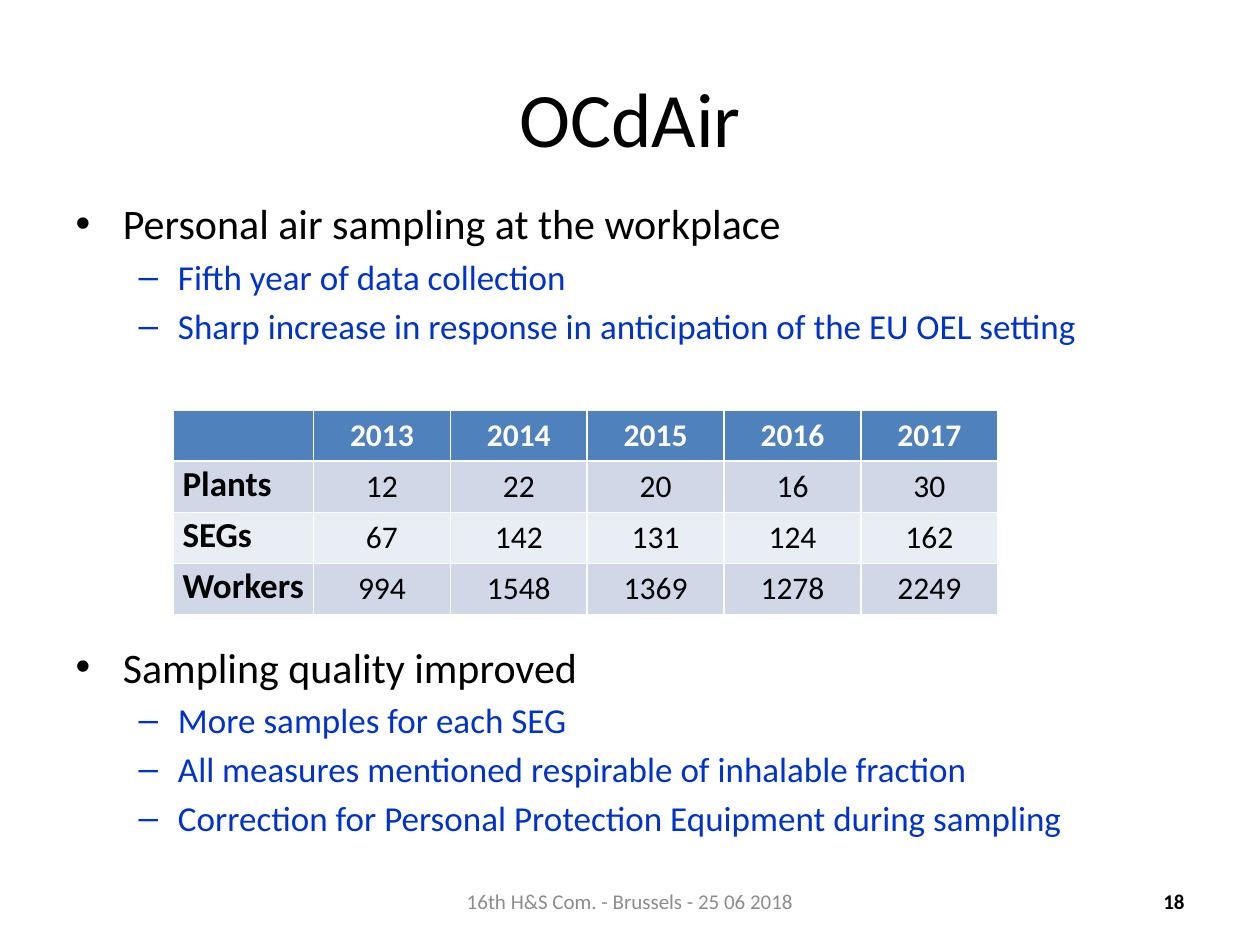
"""Build the OCdAir slide: two bullet lists around a table of yearly air sampling counts."""
from lxml.etree import SubElement
from pptx import Presentation
from pptx.dml.color import RGBColor
from pptx.enum.text import MSO_ANCHOR, MSO_AUTO_SIZE, PP_ALIGN
from pptx.oxml.ns import qn
from pptx.util import Cm, Pt

BLACK = RGBColor(0x00, 0x00, 0x00)
WHITE = RGBColor(0xFF, 0xFF, 0xFF)
GREY = RGBColor(0x8C, 0x8C, 0x8C)
BLUE = RGBColor(0x00, 0x33, 0xCC)
HEADER_BLUE = RGBColor(0x4F, 0x81, 0xBD)
BAND_DARK = RGBColor(0xD0, 0xD8, 0xE8)
BAND_LIGHT = RGBColor(0xE9, 0xED, 0xF4)


def write(paragraph, text, size, color, bold=False):
    run = paragraph.add_run()
    run.text = text
    font_format = {"name": "Calibri", "size": Pt(size), "bold": bold}
    for name, value in font_format.items():
        setattr(run.font, name, value)
    run.font.color.rgb = color


def place(shape, left, top, width, height):
    box = {"left": left, "top": top, "width": width, "height": height}
    for name, value in box.items():
        setattr(shape, name, Cm(value))


deck = Presentation()
deck.slide_width, deck.slide_height = Cm(25.4), Cm(19.05)
slide = deck.slides.add_slide(deck.slide_layouts.get_by_name("Two Content"))
heading, sampling, quality = slide.placeholders

place(heading, 1.27, 0.76, 22.86, 3.18)
heading.text_frame.vertical_anchor = MSO_ANCHOR.MIDDLE
write(heading.text_frame.paragraphs[0], "OCdAir", 44, BLACK)

place(sampling, 1.27, 3.86, 23.62, 3.68)
place(quality, 1.27, 12.8, 24.13, 4.72)
topics = [
    (sampling, [
        "Personal air sampling at the workplace",
        "Fifth year of data collection",
        "Sharp increase in response in anticipation of the EU OEL setting",
    ]),
    (quality, [
        "Sampling quality improved",
        "More samples for each SEG",
        "All measures mentioned respirable of inhalable fraction",
        "Correction for Personal Protection Equipment during sampling",
    ]),
]
for topic, (statement, *details) in topics:
    frame = topic.text_frame
    frame.auto_size = MSO_AUTO_SIZE.NONE
    write(frame.paragraphs[0], statement, 24, BLACK)
    for detail in details:
        point = frame.add_paragraph()
        point.level = 1
        write(point, detail, 20, BLUE)

counts = [
    ["", "2013", "2014", "2015", "2016", "2017"],
    ["Plants", "12", "22", "20", "16", "30"],
    ["SEGs", "67", "142", "131", "124", "162"],
    ["Workers", "994", "1548", "1369", "1278", "2249"],
]
row_fills = [HEADER_BLUE, BAND_DARK, BAND_LIGHT, BAND_DARK]
label_width, year_width, row_height = 2.82, 2.76, 1.03
table = slide.shapes.add_table(
    len(counts), len(counts[0]), Cm(3.5), Cm(8.27),
    Cm(label_width + 5 * year_width), Cm(4 * row_height),
).table
for index, column in enumerate(table.columns):
    column.width = Cm(year_width if index else label_width)
for row in table.rows:
    row.height = Cm(row_height)

for row_index, (values, fill) in enumerate(zip(counts, row_fills)):
    for column_index, value in enumerate(values):
        is_label = column_index == 0
        cell = table.cell(row_index, column_index)
        cell_format = {
            "vertical_anchor": MSO_ANCHOR.BOTTOM,
            "margin_left": Cm(0.18 if is_label else 0.02),
            "margin_right": Cm(0.02),
            "margin_top": Cm(0.02),
            "margin_bottom": Cm(0.13),
        }
        for name, setting in cell_format.items():
            setattr(cell, name, setting)
        for side in "LRTB":
            heavy = (row_index, side) in [(0, "B"), (1, "T")]
            border = SubElement(cell._tc.get_or_add_tcPr(), qn(f"a:ln{side}"),
                                w=str(Pt(1.5 if heavy else 1)))
            border_fill = SubElement(border, qn("a:solidFill"))
            SubElement(border_fill, qn("a:srgbClr"), val=str(WHITE))
        cell.fill.solid()
        cell.fill.fore_color.rgb = fill
        if value:
            paragraph = cell.text_frame.paragraphs[0]
            paragraph.alignment = PP_ALIGN.LEFT if is_label else PP_ALIGN.CENTER
            write(paragraph, value, 20 if is_label else 18,
                  BLACK if row_index else WHITE, is_label or row_index == 0)

footers = [
    ("16th H&S Com. - Brussels - 25 06 2018", 8.68, 8.04, PP_ALIGN.CENTER, GREY, False),
    ("18", 18.2, 5.93, PP_ALIGN.RIGHT, BLACK, True),
]
for text, left, width, alignment, color, bold in footers:
    footer = slide.shapes.add_textbox(Cm(left), Cm(17.66), Cm(width), Cm(1.01))
    footer.text_frame.word_wrap = True
    footer.text_frame.vertical_anchor = MSO_ANCHOR.MIDDLE
    footer.text_frame.paragraphs[0].alignment = alignment
    write(footer.text_frame.paragraphs[0], text, 12, color, bold)

deck.save("out.pptx")
